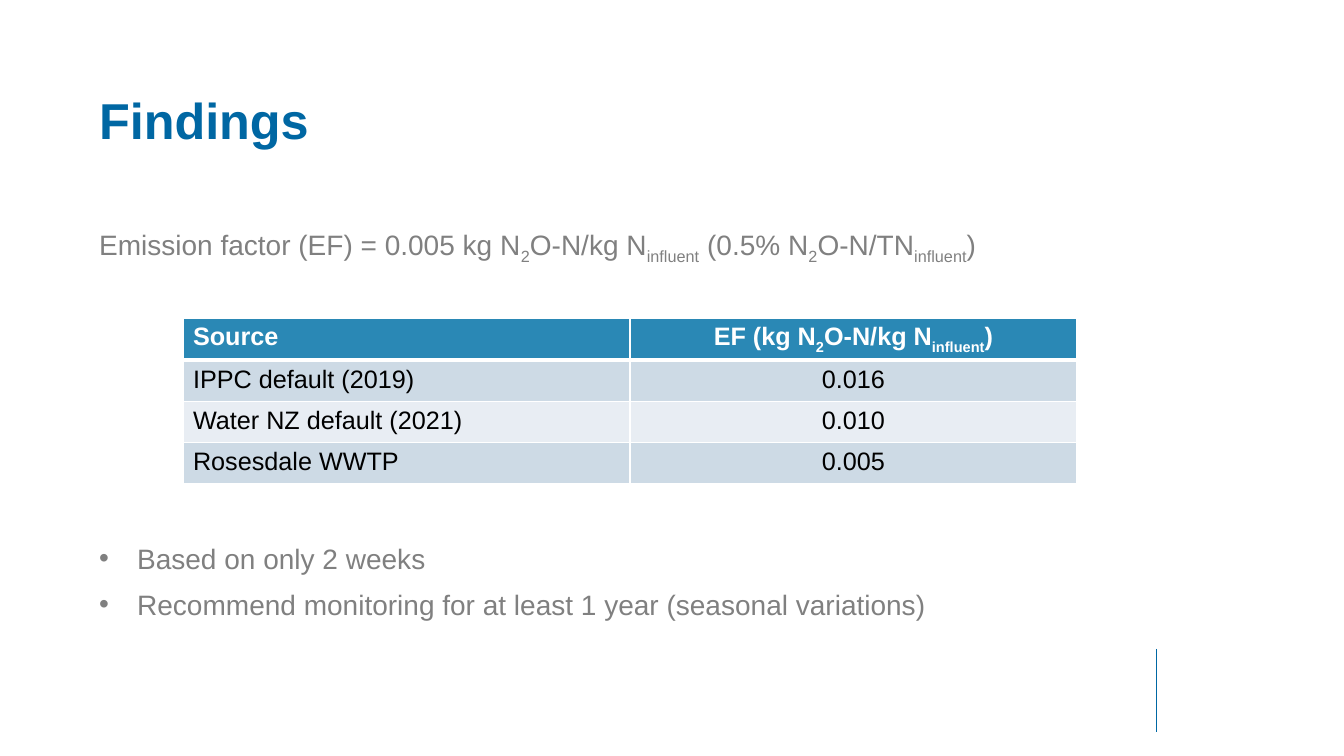
from dataclasses import dataclass

from lxml.etree import SubElement
from pptx import Presentation
from pptx.dml.color import RGBColor
from pptx.enum.shapes import MSO_CONNECTOR
from pptx.enum.text import MSO_ANCHOR, MSO_AUTO_SIZE, PP_ALIGN
from pptx.oxml.ns import qn
from pptx.util import Pt

EMU_PER_PX = 914400 / 100.8


@dataclass(frozen=True)
class Theme:
    font: str = "Arial"
    accent: str = "0067A3"
    body: str = "808080"
    header: str = "2A88B5"
    bands: tuple = ("CDDAE5", "E8EDF3")
    white: str = "FFFFFF"
    black: str = "000000"
    title_size: int = 36
    body_size: int = 20
    table_size: int = 18


THEME = Theme()
FORMULA = "Emission factor (EF) = 0.005 kg N|2|O-N/kg N|influent| (0.5% N|2|O-N/TN|influent|)"
BULLETS = ["Based on only 2 weeks",
           "Recommend monitoring for at least 1 year (seasonal variations)"]
EMISSION_FACTORS = [
    ("Source", "EF (kg N|2|O-N/kg N|influent|)"),
    ("IPPC default (2019)", "0.016"),
    ("Water NZ default (2021)", "0.010"),
    ("Rosesdale WWTP", "0.005"),
]


def px(length):
    return round(length * EMU_PER_PX)


def rgb(color):
    return RGBColor.from_string(color)


def write_text(paragraph, text, *, size, color, bold=False, align=PP_ALIGN.LEFT,
               space_before=0, bullet=None, indent=0):
    properties = paragraph._p.get_or_add_pPr()
    properties.set("marL", str(px(indent)))
    properties.set("indent", str(-px(indent)))
    if bullet:
        SubElement(properties, qn("a:buFont")).set("typeface", THEME.font)
        SubElement(properties, qn("a:buChar")).set("char", bullet)
    else:
        SubElement(properties, qn("a:buNone"))
    paragraph.alignment = align
    paragraph.line_spacing = 1.0
    paragraph.space_before = Pt(space_before)
    paragraph.space_after = Pt(0)
    for index, part in enumerate(text.split("|")):
        run = paragraph.add_run()
        run.text = part
        run.font.name = THEME.font
        run.font.size = Pt(size)
        run.font.bold = bold
        run.font.color.rgb = rgb(color)
        if index % 2:
            run._r.get_or_add_rPr().set("baseline", "-25000")


def place_placeholder(shape, box):
    shape.left, shape.top, shape.width, shape.height = map(px, box)
    frame = shape.text_frame
    frame.word_wrap = True
    frame.auto_size = MSO_AUTO_SIZE.NONE
    frame.vertical_anchor = MSO_ANCHOR.TOP
    return frame


def add_title(slide, box):
    frame = place_placeholder(slide.shapes.title, box)
    write_text(frame.paragraphs[0], "Findings", size=THEME.title_size,
               color=THEME.accent, bold=True)


def add_body(slide, box):
    frame = place_placeholder(slide.placeholders[1], box)
    style = {"size": THEME.body_size, "color": THEME.body}
    write_text(frame.paragraphs[0], FORMULA, **style)
    for text, space_before in zip(BULLETS, (197, 9)):
        write_text(frame.add_paragraph(), text, bullet="•", indent=38,
                   space_before=space_before, **style)


def format_cell(cell, fill, borders):
    properties = cell._tc.get_or_add_tcPr()
    for side, width in borders.items():
        line = SubElement(properties, qn(f"a:ln{side}"), w=str(Pt(width)))
        color = SubElement(SubElement(line, qn("a:solidFill")), qn("a:srgbClr"))
        color.set("val", THEME.white)
    cell.fill.solid()
    cell.fill.fore_color.rgb = rgb(fill)


def add_factor_table(slide, box):
    row_count, column_count = len(EMISSION_FACTORS), len(EMISSION_FACTORS[0])
    left, top, width, height = box
    table = slide.shapes.add_table(row_count, column_count, *map(px, box)).table
    table.horz_banding = False
    for column in table.columns:
        column.width = px(width // column_count)
    for row_index, values in enumerate(EMISSION_FACTORS):
        table.rows[row_index].height = px(height // row_count)
        is_header = row_index == 0
        fill = THEME.header if is_header else THEME.bands[(row_index - 1) % 2]
        borders = {"L": 1, "R": 1, "T": 3 if row_index == 1 else 1,
                   "B": 3 if is_header else 1}
        for column_index, value in enumerate(values):
            cell = table.cell(row_index, column_index)
            format_cell(cell, fill, borders)
            write_text(cell.text_frame.paragraphs[0], value, size=THEME.table_size,
                       color=THEME.white if is_header else THEME.black, bold=is_header,
                       align=PP_ALIGN.CENTER if column_index else PP_ALIGN.LEFT)


def add_footer_rule(slide, box):
    left, top, width, height = box
    rule = slide.shapes.add_connector(MSO_CONNECTOR.STRAIGHT, px(left), px(top),
                                      px(left + width), px(top + height))
    rule.line.color.rgb = rgb(THEME.accent)
    rule.line.width = Pt(0.5)
    SubElement(rule._element.spPr, qn("a:effectLst"))


def main():
    presentation = Presentation()
    presentation.slide_width, presentation.slide_height = px(1344), px(756)
    slide = presentation.slides.add_slide(presentation.slide_layouts[1])
    add_footer_rule(slide, (1156, 649, 0, 83))
    add_title(slide, (89, 84, 1190, 63))
    add_body(slide, (89, 222, 1190, 449))
    add_factor_table(slide, (183, 318, 894, 164))
    presentation.save("out.pptx")


if __name__ == "__main__":
    main()
